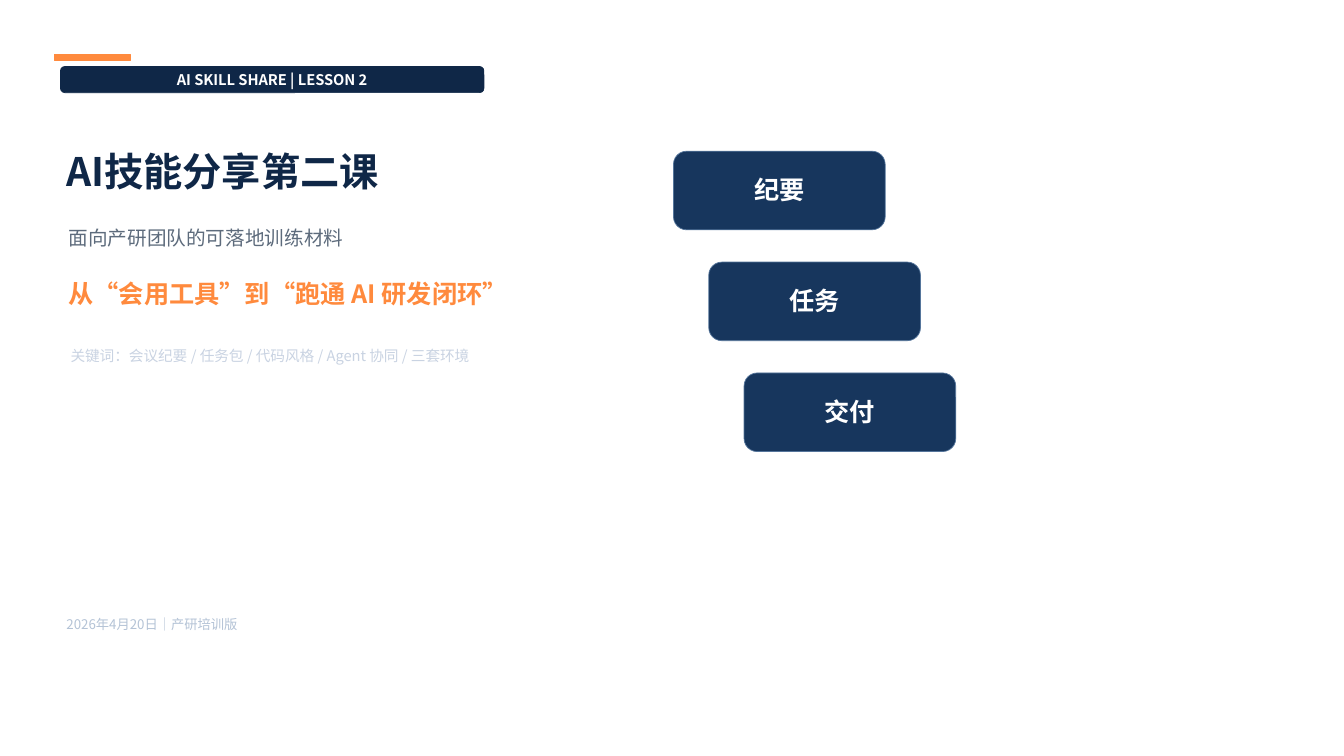
from dataclasses import dataclass

from lxml import etree
from pptx import Presentation
from pptx.dml.color import RGBColor
from pptx.enum.shapes import MSO_SHAPE
from pptx.enum.text import MSO_ANCHOR, MSO_AUTO_SIZE, PP_ALIGN
from pptx.oxml.ns import qn
from pptx.util import Inches, Pt

RECTANGLE = MSO_SHAPE.RECTANGLE
ROUNDED = MSO_SHAPE.ROUNDED_RECTANGLE
TOP = MSO_ANCHOR.TOP
MIDDLE = MSO_ANCHOR.MIDDLE
GROW = MSO_AUTO_SIZE.SHAPE_TO_FIT_TEXT
LEFT = PP_ALIGN.LEFT
CENTER = PP_ALIGN.CENTER

COLUMNS, ROWS = 133.3, 75
CELL = Inches(0.1)


@dataclass(frozen=True)
class Theme:
    font: str = "Noto Sans CJK SC"
    navy: str = "0F2747"
    orange: str = "FF8A3D"
    slate: str = "5D6B7C"
    mist: str = "C9D3E2"
    haze: str = "B4C3D6"
    card: str = "17365D"
    card_edge: str = "55759B"
    white: str = "FFFFFF"
    title: float = 28
    heading: float = 18
    subtitle: float = 14
    small: float = 10.5
    footer: float = 9.5
    outline: float = 0.5


THEME = Theme()


def cells(*counts):
    return [round(count * CELL) for count in counts]


def write(frame, wording, size, color, bold, align, anchor, insets):
    frame.word_wrap = True
    frame.vertical_anchor = anchor
    side, edge = cells(*insets)
    frame.margin_left = frame.margin_right = side
    frame.margin_top = frame.margin_bottom = edge
    paragraph = frame.paragraphs[0]
    paragraph.text = wording
    paragraph.alignment = align
    font = paragraph.font
    font.name = THEME.font
    font.size = Pt(size)
    font.bold = bold
    font.color.rgb = RGBColor.from_string(color)
    defaults = paragraph._p.pPr.find(qn("a:defRPr"))
    etree.SubElement(defaults, qn("a:ea")).set("typeface", THEME.font)


def add_block(slide, kind, area, fill, edge):
    block = slide.shapes.add_shape(kind, *cells(*area))
    block.shadow.inherit = False
    block.fill.solid()
    block.fill.fore_color.rgb = RGBColor.from_string(fill)
    block.line.color.rgb = RGBColor.from_string(edge)
    block.line.width = Pt(THEME.outline)
    return block


def add_label(slide, area, wording, size, color, bold=False, align=LEFT):
    frame = slide.shapes.add_textbox(*cells(*area)).text_frame
    write(frame, wording, size, color, bold, align, TOP, (0.8, 0.6))
    frame.auto_size = GROW


def add_lesson_tag(slide):
    add_block(slide, RECTANGLE, (5.4, 5.4, 7.5, 0.6), THEME.orange, THEME.orange)
    tag = add_block(slide, ROUNDED, (6, 6.6, 42, 2.6), THEME.navy, THEME.navy)
    write(tag.text_frame, "AI SKILL SHARE | LESSON 2", THEME.small, THEME.white,
          True, CENTER, MIDDLE, (0.6, 0.4))


def add_step_cards(slide, steps):
    for index, step in enumerate(steps):
        left, top = 66.8 + 3.5 * index, 15 + 11 * index
        add_block(slide, ROUNDED, (left, top, 21, 7.8), THEME.card, THEME.card_edge)
        add_label(slide, (left, top + 1.7, 21, 3.6), step,
                  THEME.heading, THEME.white, True, CENTER)


def main():
    deck = Presentation()
    deck.slide_width, deck.slide_height = cells(COLUMNS, ROWS)
    slide = deck.slides.add_slide(deck.slide_layouts[6])

    add_lesson_tag(slide)
    add_label(slide, (5.8, 14, 51, 7.2), "AI技能分享第二课",
              THEME.title, THEME.navy, True)
    add_label(slide, (6, 21.8, 56, 3.4), "面向产研团队的可落地训练材料",
              THEME.subtitle, THEME.slate)
    add_label(slide, (6, 27, 62, 4), "从“会用工具”到“跑通 AI 研发闭环”",
              THEME.heading, THEME.orange, True)
    add_label(slide, (6.2, 33.8, 58, 2.6),
              "关键词：会议纪要 / 任务包 / 代码风格 / Agent 协同 / 三套环境",
              THEME.small, THEME.mist)
    add_step_cards(slide, ["纪要", "任务", "交付"])
    add_label(slide, (5.8, 60.5, 32, 2.2), "2026年4月20日｜产研培训版",
              THEME.footer, THEME.haze)

    deck.save("out.pptx")


if __name__ == "__main__":
    main()
